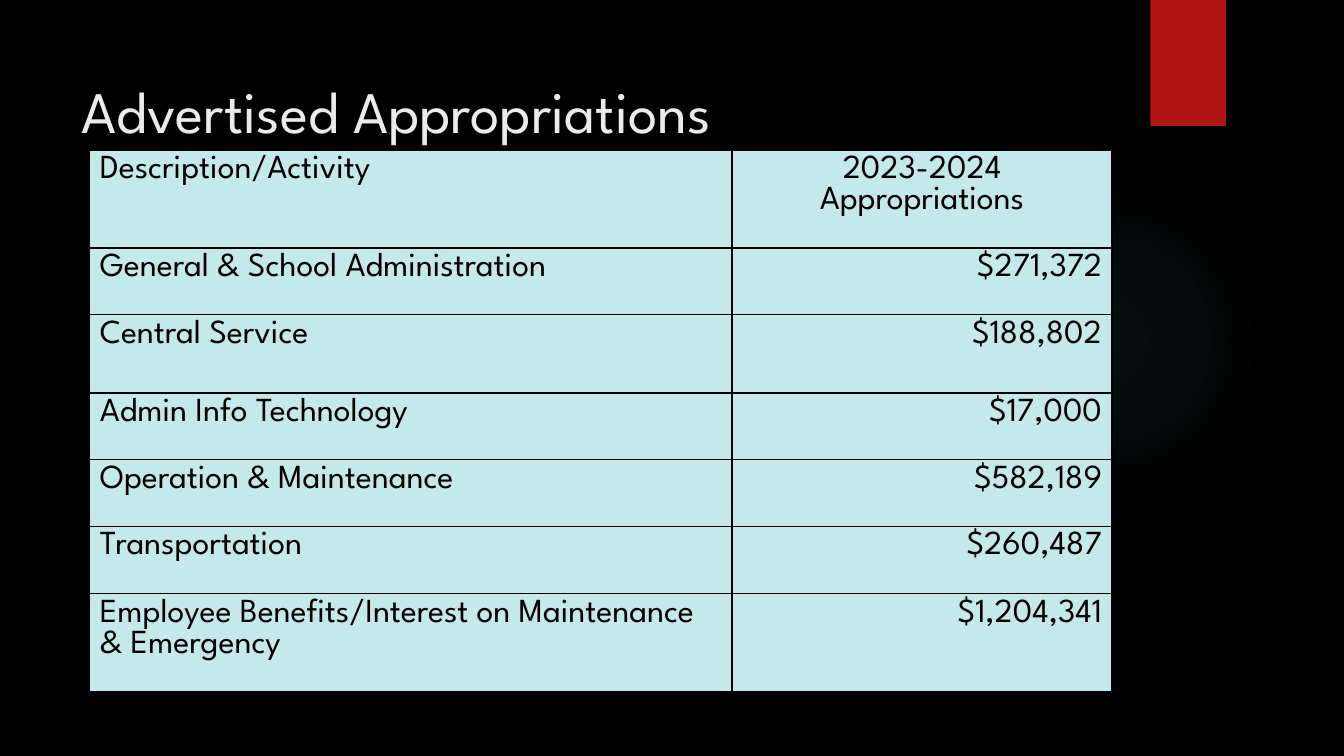
from pptx import Presentation
from pptx.dml.color import RGBColor
from pptx.enum.shapes import MSO_SHAPE as Shape
from pptx.enum.text import PP_ALIGN as Align
from pptx.oxml import parse_xml
from pptx.oxml.ns import nsdecls
from pptx.util import Inches, Pt

FONT = "League Spartan"
BLACK = RGBColor(0x00, 0x00, 0x00)
RED = RGBColor(0xB0, 0x15, 0x13)
TEAL = RGBColor(0x50, 0xB9, 0xC1)
PALE = RGBColor(0xC5, 0xE8, 0xEA)
LIGHT = RGBColor(0xEB, 0xEB, 0xEB)

COLS = [6.37, 3.77]
ROWS = [
    (0.97, "Description/Activity", "2023-2024 Appropriations"),
    (0.66, "General & School Administration", "$271,372"),
    (0.78, "Central Service", "$188,802"),
    (0.66, "Admin Info Technology", "$17,000"),
    (0.66, "Operation & Maintenance", "$582,189"),
    (0.67, "Transportation", "$260,487"),
    (0.97, "Employee Benefits/Interest on Maintenance & Emergency", "$1,204,341"),
]


def add_block(slide, kind, box, color):
    block = slide.shapes.add_shape(kind, *map(Inches, box))
    block.shadow.inherit = False
    block.fill.solid()
    block.fill.fore_color.rgb = color
    block.line.fill.background()
    return block


def add_glow(slide, box, stops):
    glow = add_block(slide, Shape.OVAL, box, TEAL)
    marks = "".join(
        f'<a:gs pos="{pos * 1000}"><a:srgbClr val="{TEAL}">'
        f'<a:alpha val="{alpha * 1000}"/></a:srgbClr></a:gs>'
        for pos, alpha in stops
    )
    grad = parse_xml(
        f'<a:gradFill {nsdecls("a")}><a:gsLst>{marks}</a:gsLst>'
        '<a:path path="circle"><a:fillToRect l="50000" t="50000" '
        'r="50000" b="50000"/></a:path></a:gradFill>'
    )
    props = glow._element.spPr
    props.replace(props.find("{*}solidFill"), grad)


def style(para, size, color, align=Align.LEFT):
    para.alignment = align
    for run in para.runs:
        run.font.name = FONT
        run.font.size = Pt(size)
        run.font.color.rgb = color


def add_title(slide, text):
    box = slide.shapes.add_textbox(
        Inches(0.71), Inches(0.5), Inches(10.29), Inches(1.53))
    frame = box.text_frame
    frame.word_wrap = True
    frame.margin_top = Inches(0.24)
    frame.text = text
    style(frame.paragraphs[0], 42, LIGHT)


def add_borders(cell):
    props = cell._tc.get_or_add_tcPr()
    for place, side in enumerate(("lnL", "lnR", "lnT", "lnB")):
        props.insert(place, parse_xml(
            f'<a:{side} {nsdecls("a")} w="{Pt(1)}"><a:solidFill>'
            f'<a:srgbClr val="{BLACK}"/></a:solidFill></a:{side}>'))


def fill_cell(cell, text, align):
    cell.fill.solid()
    cell.fill.fore_color.rgb = PALE
    cell.text = text
    style(cell.text_frame.paragraphs[0], 24, BLACK, align)
    add_borders(cell)


def add_costs(slide):
    high = sum(row[0] for row in ROWS)
    table = slide.shapes.add_table(
        len(ROWS), len(COLS), Inches(0.89), Inches(1.49),
        Inches(sum(COLS)), Inches(high)).table
    for col, width in zip(table.columns, COLS):
        col.width = Inches(width)
    for i, (height, label, amount) in enumerate(ROWS):
        table.rows[i].height = Inches(height)
        fill_cell(table.cell(i, 0), label, Align.LEFT)
        fill_cell(table.cell(i, 1), amount, Align.RIGHT if i else Align.CENTER)


def main():
    deck = Presentation()
    deck.slide_width = Inches(13.33)
    deck.slide_height = Inches(7.5)
    slide = deck.slides.add_slide(deck.slide_layouts[6])
    slide.background.fill.solid()
    slide.background.fill.fore_color.rgb = BLACK
    add_glow(slide, (9.41, 1.83, 3.08, 3.08), [(0, 7), (36, 6), (69, 0)])
    add_block(slide, Shape.RECTANGLE, (11.41, 0, 0.75, 1.25), RED)
    add_title(slide, "Advertised Appropriations")
    add_costs(slide)
    deck.save("out.pptx")


if __name__ == "__main__":
    main()
